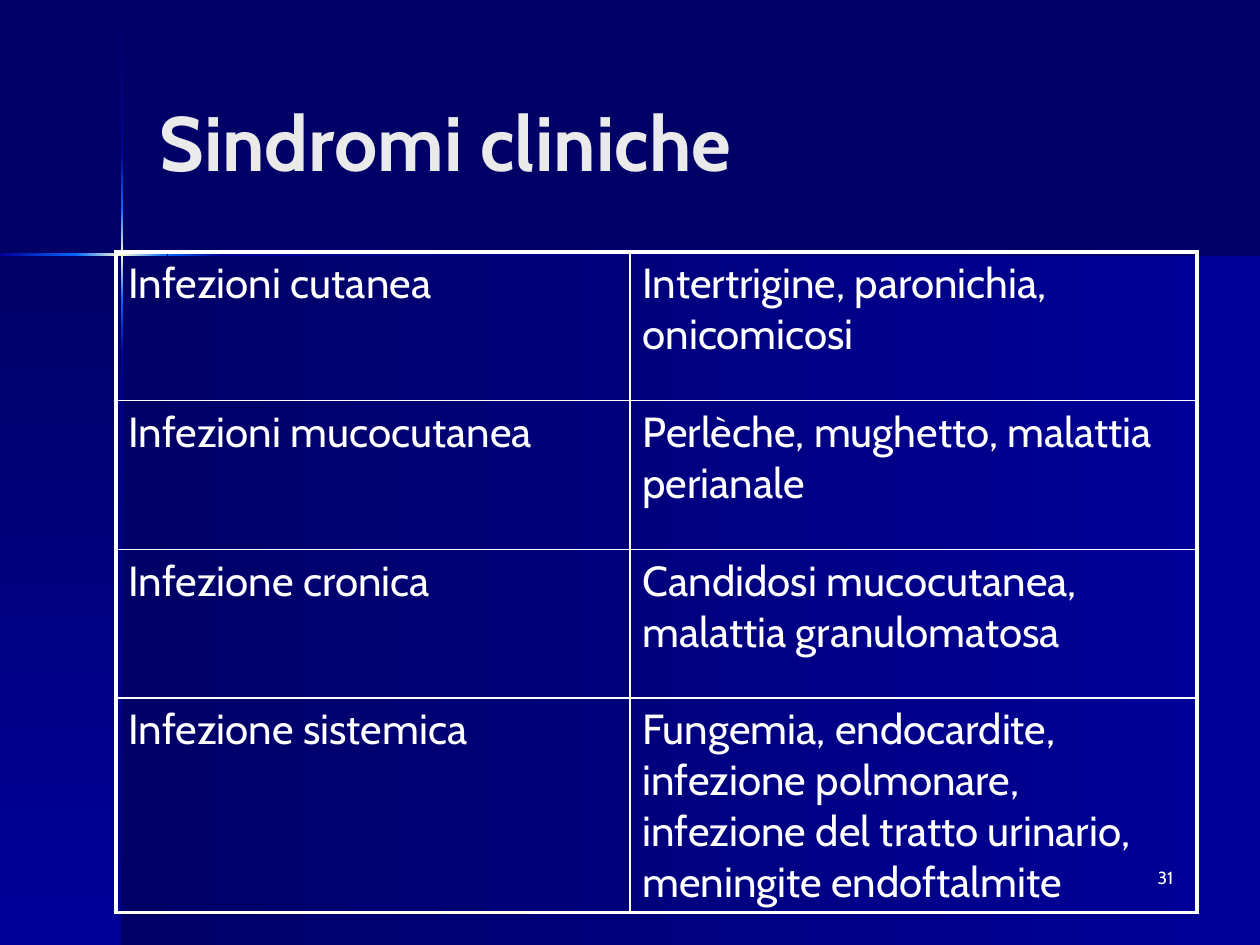
from lxml import etree
from pptx import Presentation
from pptx.dml.color import RGBColor
from pptx.enum.shapes import MSO_SHAPE
from pptx.enum.text import MSO_ANCHOR, PP_ALIGN
from pptx.oxml.ns import qn
from pptx.util import Inches, Pt

RECTANGLE = MSO_SHAPE.RECTANGLE
TOP, MIDDLE = MSO_ANCHOR.TOP, MSO_ANCHOR.MIDDLE
LEFT, RIGHT = PP_ALIGN.LEFT, PP_ALIGN.RIGHT

THEME = {
    "navy": "000066", "blue": "000099", "bright": "0066FF", "glow": "FFFFCC",
    "title": {"size": Pt(44), "bold": True, "color": "EAEAEA"},
    "body": {"size": Pt(24), "bold": False, "color": "FFFFFF"},
    "number": {"size": Pt(10), "bold": False, "color": "FFFFFF"},
    "font": "Cabin", "border": "FFFFFF", "outer": 2.25, "inner": 1,
}

# Grid of 100 columns by 75 rows
presentation = Presentation()
presentation.slide_width, presentation.slide_height = Inches(10), Inches(7.5)
COLUMN = presentation.slide_width / 100
ROW = presentation.slide_height / 75
slide = presentation.slides.add_slide(presentation.slide_layouts[6])
slide.background.fill.solid()
slide.background.fill.fore_color.rgb = RGBColor.from_string(THEME["navy"])


def place(left, top, width, height):
    return (round(left * COLUMN), round(top * ROW),
            round(width * COLUMN), round(height * ROW))


def write(text_frame, text, style, alignment=LEFT):
    paragraph = text_frame.paragraphs[0]
    paragraph.text = text
    paragraph.alignment = alignment
    font = paragraph.runs[0].font
    for name, value in {"name": THEME["font"], "size": style["size"],
                        "bold": style["bold"]}.items():
        setattr(font, name, value)
    font.color.rgb = RGBColor.from_string(style["color"])


# Panels and the two light beams: place, gradient angle, evenly spaced colours
CROSS_X, CROSS_Y, BEAM = 9.7, 20.2, 0.2
beam_x, beam_y = CROSS_X - BEAM / 2, CROSS_Y - BEAM / 2
bands = [
    ((CROSS_X, CROSS_Y, 100 - CROSS_X, 75 - CROSS_Y), 0, ["navy", "blue"]),
    ((0, CROSS_Y, CROSS_X, 75 - CROSS_Y), 90, ["navy", "blue"]),
]
core = ["bright", "glow", "bright"]
for start, end, colors in [
    (0.1, 12.1, ["navy", "blue"]), (12.1, 16.5, ["blue", "bright"]),
    (16.5, 23.8, core),
    (23.8, 28.2, ["bright", "blue"]), (28.2, 75, ["blue", "navy"]),
]:
    bands.append(((beam_x, start, BEAM, end - start), 90, colors))
for start, end, colors in [
    (0, 6, ["blue", "bright"]), (6, 13.3, core),
    (13.3, 17.7, ["bright", "blue"]), (17.7, 100, ["blue", "navy"]),
]:
    bands.append(((start, beam_y, end - start, BEAM), 0, colors))

for position, angle, colors in bands:
    band = slide.shapes.add_shape(RECTANGLE, *place(*position))
    band.shadow.inherit = False
    band.line.fill.background()
    band.fill.gradient()
    band.fill.gradient_angle = (360 - angle) % 360
    stops = next(band.element.iter(qn("a:gsLst")))
    for stop in list(stops):
        stops.remove(stop)
    for index, color in enumerate(colors):
        share = round(100000 * index / (len(colors) - 1))
        stop = etree.SubElement(stops, qn("a:gs"), pos=str(share))
        etree.SubElement(stop, qn("a:srgbClr"), val=THEME[color])

# Slide number and title
for text, position, style, anchor, alignment in [
    ("31", (73.3, 68.3, 20.8, 5), THEME["number"], TOP, RIGHT),
    ("Sindromi cliniche", (11.7, 3.3, 82.5, 15.7), THEME["title"], MIDDLE, LEFT),
]:
    text_frame = slide.shapes.add_textbox(*place(*position)).text_frame
    text_frame.word_wrap = True
    text_frame.vertical_anchor = anchor
    write(text_frame, text, style, alignment)

# Table of syndromes
syndromes = [
    ("Infezioni cutanea", "Intertrigine, paronichia, onicomicosi"),
    ("Infezioni mucocutanea", "Perlèche, mughetto, malattia perianale"),
    ("Infezione cronica", "Candidosi mucocutanea, malattia granulomatosa"),
    ("Infezione sistemica", "Fungemia, endocardite, infezione polmonare, "
     "infezione del tratto urinario, meningite endoftalmite"),
]
widths, heights = [40.8, 45], [11.8, 11.8, 11.8, 17]
table = slide.shapes.add_table(
    len(heights), len(widths), *place(9.2, 20, sum(widths), sum(heights))).table
table.first_row = table.horz_banding = False
for column, width in zip(table.columns, widths):
    column.width = round(width * COLUMN)
for row, height in zip(table.rows, heights):
    row.height = round(height * ROW)

for row_index, syndrome in enumerate(syndromes):
    for column_index, text in enumerate(syndrome):
        cell = table.cell(row_index, column_index)
        cell.fill.background()
        write(cell.text_frame, text, THEME["body"])
        # Thick lines around the table, thin ones inside
        edges = {
            "a:lnL": column_index == 0,
            "a:lnR": column_index == len(widths) - 1,
            "a:lnT": row_index == 0,
            "a:lnB": row_index == len(heights) - 1,
        }
        properties = cell._tc.get_or_add_tcPr()
        for index, (edge, is_outer) in enumerate(edges.items()):
            weight = Pt(THEME["outer" if is_outer else "inner"])
            line = etree.Element(qn(edge), w=str(weight))
            fill = etree.SubElement(line, qn("a:solidFill"))
            etree.SubElement(fill, qn("a:srgbClr"), val=THEME["border"])
            properties.insert(index, line)

presentation.save("out.pptx")
